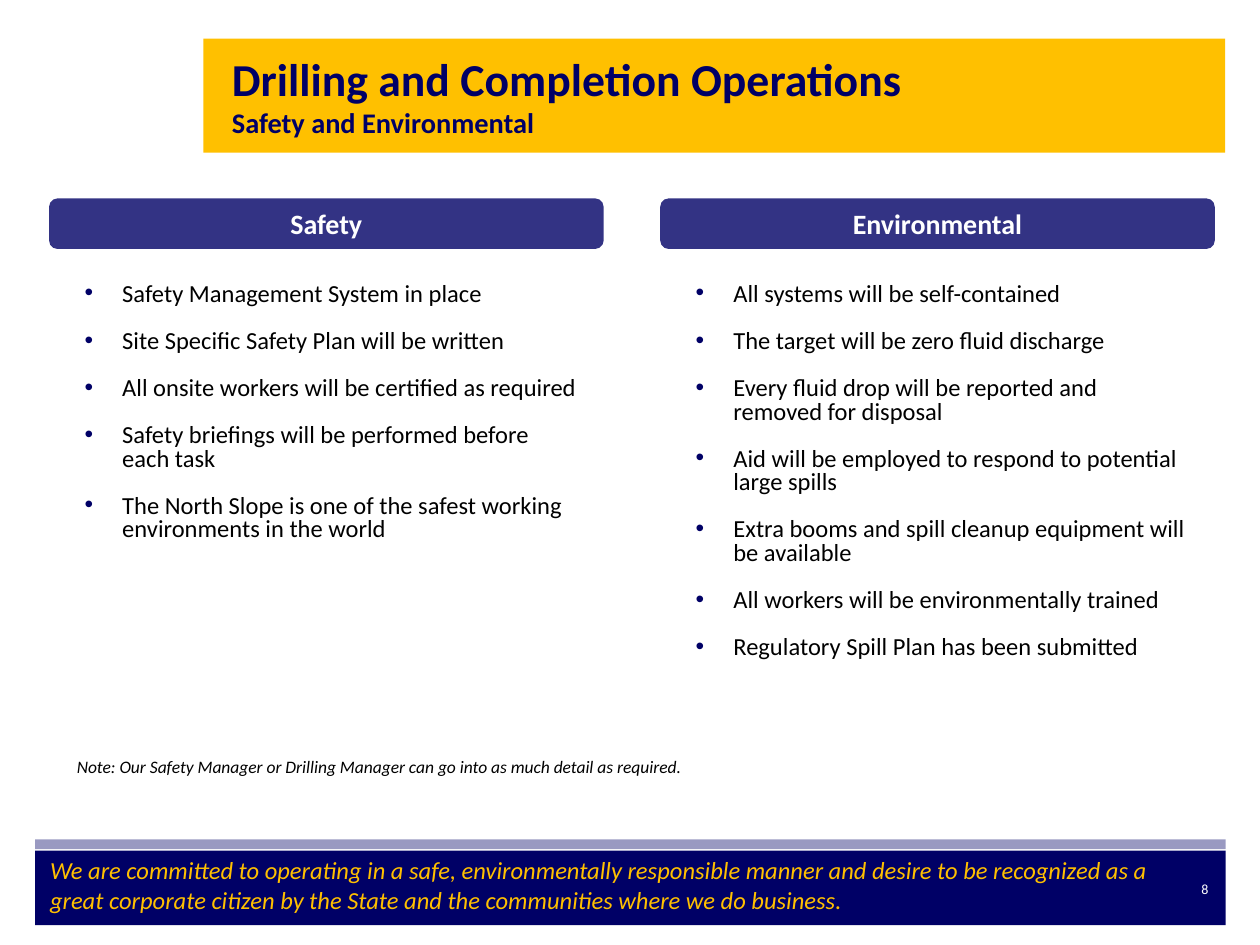
import dataclasses
import typing

import pptx
import pptx.dml.color
import pptx.enum.shapes
import pptx.enum.text
import pptx.oxml
import pptx.oxml.ns
import pptx.util

Cm = pptx.util.Cm
Pt = pptx.util.Pt
Align = pptx.enum.text.PP_ALIGN
Anchor = pptx.enum.text.MSO_ANCHOR
Shape = pptx.enum.shapes.MSO_SHAPE

COLORS = {"navy": "000066", "gold": "FFC000", "white": "FFFFFF", "black": "000000"}
FONT = "Calibri"
COLUMN_LEFT, COLUMN_STEP = 0.99, 12.32


@dataclasses.dataclass
class Area:
    left: float
    top: float
    width: float
    height: float

    def lengths(self) -> tuple:
        return tuple(Cm(v) for v in dataclasses.astuple(self))


@dataclasses.dataclass
class Band:
    area: Area
    color: str
    opacity: int = 100


@dataclasses.dataclass
class Column:
    heading: str
    points: list[str]


BANDS = [
    Band(Area(0.71, 16.92, 24, 0.2), "navy", 40),
    Band(Area(0.71, 17.15, 24, 1.5), "navy"),
    Band(Area(4.1, 0.78, 20.6, 2.3), "gold"),
]

COLUMNS = [
    Column("Safety", [
        "Safety Management System in place",
        "Site Specific Safety Plan will be written",
        "All onsite workers will be certified as required",
        "Safety briefings will be performed before each task",
        "The North Slope is one of the safest working environments in the world",
    ]),
    Column("Environmental", [
        "All systems will be self-contained",
        "The target will be zero fluid discharge",
        "Every fluid drop will be reported and removed for disposal",
        "Aid will be employed to respond to potential large spills",
        "Extra booms and spill cleanup equipment will be available",
        "All workers will be environmentally trained",
        "Regulatory Spill Plan has been submitted",
    ]),
]


def rgb(name: str) -> pptx.dml.color.RGBColor:
    return pptx.dml.color.RGBColor.from_string(COLORS[name])


def add_span(para, text: str, *, size: float, color: str = "black",
             bold: bool = False, italic: bool = False) -> None:
    span = para.add_run()
    span.text = text
    font = span.font
    font.name, font.size, font.bold, font.italic = FONT, Pt(size), bold, italic
    font.color.rgb = rgb(color)


def add_block(page, area: Area, color: str, opacity: int = 100,
              kind: Shape = Shape.RECTANGLE):
    block = page.shapes.add_shape(kind, *area.lengths())
    block.shadow.inherit = False
    block.line.fill.background()
    block.fill.solid()
    block.fill.fore_color.rgb = rgb(color)
    if opacity < 100:
        tint = block.element.spPr.find(".//" + pptx.oxml.ns.qn("a:srgbClr"))
        alpha = pptx.oxml.parse_xml(
            f'<a:alpha {pptx.oxml.ns.nsdecls("a")} val="{opacity * 1000}"/>')
        tint.append(alpha)
    return block


def add_text(page, area: Area, text: str, *, align: Align = Align.LEFT,
             anchor: Anchor = Anchor.TOP, **style: typing.Any) -> None:
    box = page.shapes.add_textbox(*area.lengths())
    frame = box.text_frame
    frame.word_wrap = True
    frame.vertical_anchor = anchor
    frame.paragraphs[0].alignment = align
    add_span(frame.paragraphs[0], text, **style)


def place(holder, area: Area, anchor: Anchor):
    """Move a placeholder to an area, in front of what is drawn so far."""
    holder.left, holder.top, holder.width, holder.height = area.lengths()
    holder.element.getparent().append(holder.element)
    frame = holder.text_frame
    frame.word_wrap = True
    frame.auto_size = pptx.enum.text.MSO_AUTO_SIZE.NONE
    frame.vertical_anchor = anchor
    return frame


def set_bullet(para) -> None:
    props = para._p.get_or_add_pPr()
    props.set("marL", str(Cm(1.02)))
    props.set("indent", str(Cm(-0.76)))
    names = pptx.oxml.ns.nsdecls("a")
    for xml in (
        f'<a:buClr {names}><a:srgbClr val="{COLORS["navy"]}"/></a:buClr>',
        f'<a:buFont {names} typeface="Arial"/>',
        f'<a:buChar {names} char="•"/>',
    ):
        props.append(pptx.oxml.parse_xml(xml))


def fill_list(frame, points: list[str]) -> None:
    for index, point in enumerate(points):
        para = frame.add_paragraph() if index else frame.paragraphs[0]
        set_bullet(para)
        para.line_spacing = 0.8
        para.space_before = Pt(13.5 if index else 0)
        add_span(para, point, size=14)


def add_column(page, holder, column: Column, left: float) -> None:
    heading = add_block(page, Area(left, 4, 11.18, 1.02), "navy", 80,
                        Shape.ROUNDED_RECTANGLE)
    heading.text_frame.vertical_anchor = Anchor.MIDDLE
    para = heading.text_frame.paragraphs[0]
    para.alignment = Align.CENTER
    add_span(para, column.heading, size=16, color="white", bold=True)
    frame = place(holder, Area(left + 0.2, 5.59, 10.74, 7.92), Anchor.TOP)
    fill_list(frame, column.points)


def main() -> None:
    deck = pptx.Presentation()
    deck.slide_width, deck.slide_height = Cm(25.4), Cm(19.05)
    page = deck.slides.add_slide(deck.slide_layouts.get_by_name("Two Content"))
    title, *bodies = page.placeholders

    # Background bands
    for band in BANDS:
        add_block(page, band.area, band.color, band.opacity)

    # Title and subtitle
    para = place(title, Area(4.42, 1.17, 19.63, 1.5), Anchor.MIDDLE).paragraphs[0]
    para.alignment = Align.LEFT
    add_span(para, "Drilling and Completion Operations", size=26.1, color="navy", bold=True)
    para.add_line_break()
    add_span(para, "Safety and Environmental", size=16.2, color="navy", bold=True)

    # Two columns of points
    for index, (holder, column) in enumerate(zip(bodies, COLUMNS)):
        add_column(page, holder, column, COLUMN_LEFT + index * COLUMN_STEP)

    # Note, commitment and page number
    add_text(page, Area(1.3, 15.11, 13, 0.69),
             "Note: Our Safety Manager or Drilling Manager can go into as much "
             "detail as required.", size=10, italic=True)
    add_text(page, Area(0.76, 17.12, 23.5, 1.45),
             "We are committed to operating in a safe, environmentally responsible "
             "manner and desire to be recognized as a great corporate citizen by the "
             "State and the communities where we do business.",
             size=14, color="gold", italic=True)
    add_text(page, Area(18.69, 17.4, 5.92, 1.02), "8", align=Align.RIGHT,
             anchor=Anchor.MIDDLE, size=8, color="white")

    deck.save("out.pptx")


if __name__ == "__main__":
    main()
